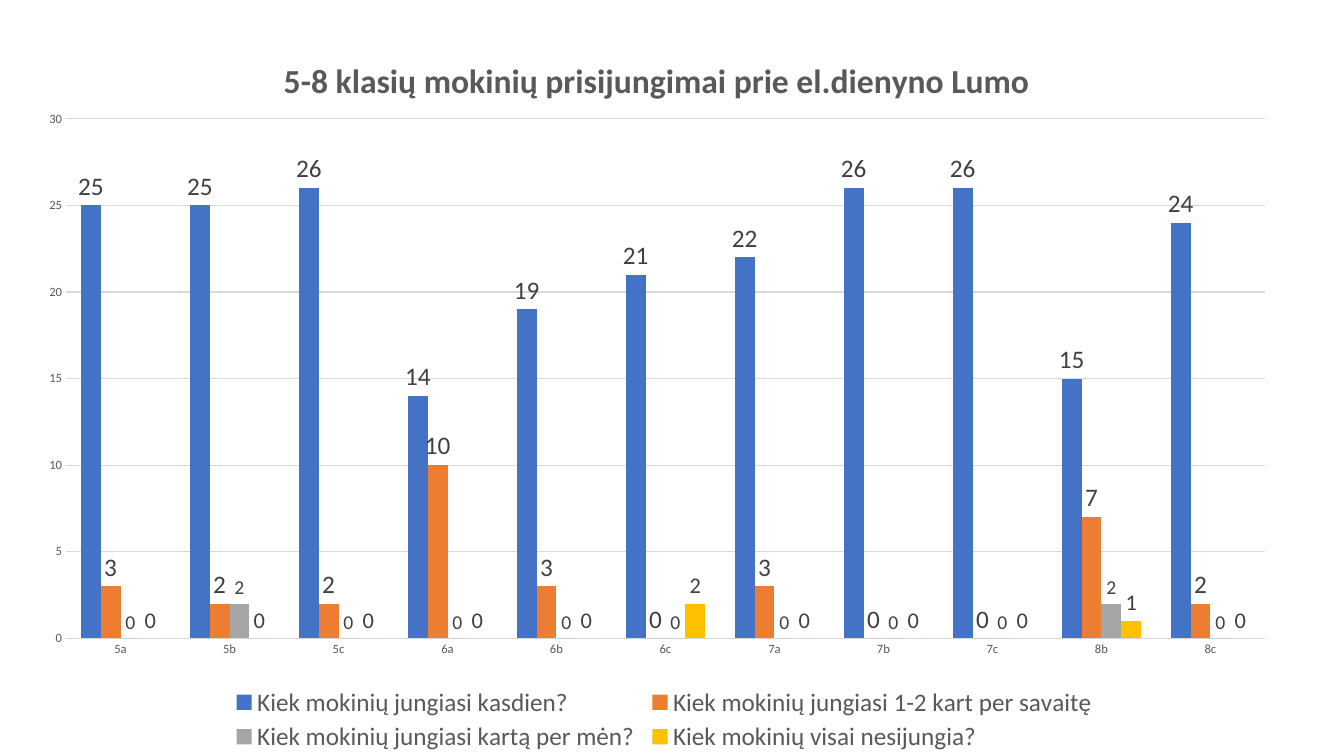
from lxml import etree
from pptx import Presentation
from pptx import util as u
from pptx.chart.data import CategoryChartData
from pptx.dml.color import RGBColor
from pptx.enum import chart as ch
from pptx.oxml.ns import qn

CLASSES = ["5a", "5b", "5c", "6a", "6b", "6c", "7a", "7b", "7c", "8b", "8c"]
# name, values, bar colour, label size
ANSWERS = [
    ("Kiek mokinių jungiasi kasdien?",
     [25, 25, 26, 14, 19, 21, 22, 26, 26, 15, 24], "4472C4", 18),
    ("Kiek mokinių jungiasi 1-2 kart per savaitę",
     [3, 2, 2, 10, 3, 0, 3, 0, 0, 7, 2], "ED7D31", 18),
    ("Kiek mokinių jungiasi kartą per mėn?",
     [0, 2, 0, 0, 0, 0, 0, 0, 0, 2, 0], "A5A5A5", 14),
    ("Kiek mokinių visai nesijungia?",
     [0, 0, 0, 0, 0, 2, 0, 0, 0, 1, 0], "FFC000", 16),
]


def rgb(value):
    return RGBColor.from_string(value)


def place(element, index, **fractions):
    """Fix a chart part's layout, in fractions of the chart area."""
    layout = element.find(qn("c:layout"))
    if layout is None:
        layout = etree.Element(qn("c:layout"))
        element.insert(index, layout)
    manual = etree.SubElement(layout, qn("c:manualLayout"))
    if element.tag == qn("c:plotArea"):
        etree.SubElement(manual, qn("c:layoutTarget")).set("val", "inner")
    for mode in ("xMode", "yMode"):
        etree.SubElement(manual, qn("c:" + mode)).set("val", "edge")
    for key, value in fractions.items():
        etree.SubElement(manual, qn("c:" + key)).set("val", str(value))


class Deck:
    font = "Calibri"
    grey = "595959"
    label_color = "404040"
    grid_color = "D9D9D9"

    def __init__(self, prs):
        self.slide = prs.slides.add_slide(prs.slide_layouts[6])

    def style(self, font, size, color=None, bold=False):
        font.name, font.size, font.bold = self.font, u.Pt(size), bold
        font.color.rgb = rgb(color or self.grey)

    def add_text(self, tf, content, **fmt):
        r = tf.paragraphs[0].add_run()
        r.text = content
        self.style(r.font, **fmt)

    def columns(self, title, categories, answers, left, top, width, height):
        data = CategoryChartData(number_format="General")
        data.categories = categories
        for name, values, _, _ in answers:
            data.add_series(name, values)
        box = [u.Inches(n) for n in (left, top, width, height)]
        chart = self.slide.shapes.add_chart(
            ch.XL_CHART_TYPE.COLUMN_CLUSTERED, *box, data).chart
        self.style(chart.font, 10, "000000")
        chart.has_title = True
        self.add_text(chart.chart_title.text_frame, title, size=24, bold=True)
        plot = chart.plots[0]
        plot.gap_width, plot.overlap = 150, 0
        plot.vary_by_categories = False
        for series, (_, _, color, size) in zip(plot.series, answers):
            self.bars(series, color, size)
        self.axes(chart)
        self.legend(chart)
        place(chart.chart_title._element, 1, x=0.2, y=0.035)
        plot_area = chart._chartSpace.chart.plotArea
        place(plot_area, 0, x=0.033, y=0.127, w=0.946, h=0.712)

    def bars(self, series, color, label_size):
        series.format.fill.solid()
        series.format.fill.fore_color.rgb = rgb(color)
        labels = series.data_labels
        labels.show_value = True
        labels.position = ch.XL_LABEL_POSITION.OUTSIDE_END
        self.style(labels.font, label_size, self.label_color)

    def axes(self, chart):
        for axis in (chart.category_axis, chart.value_axis):
            axis.major_tick_mark = axis.minor_tick_mark = ch.XL_TICK_MARK.NONE
            axis.format.line.fill.background()
            self.style(axis.tick_labels.font, 9)
        value = chart.value_axis
        value.minimum_scale, value.maximum_scale, value.major_unit = 0, 30, 5
        grid = value.major_gridlines.format.line
        grid.color.rgb, grid.width = rgb(self.grid_color), u.Pt(0.75)

    def legend(self, chart):
        chart.has_legend = True
        legend = chart.legend
        legend.position = ch.XL_LEGEND_POSITION.BOTTOM
        legend.include_in_layout = False
        self.style(legend.font, 18)
        place(legend._element, 1, x=0.16, y=0.9, w=0.69, h=0.1)


def main():
    prs = Presentation()
    prs.slide_width, prs.slide_height = u.Inches(13.33), u.Inches(7.5)
    deck = Deck(prs)
    deck.columns("5-8 klasių mokinių prisijungimai prie el.dienyno Lumo",
                 CLASSES, ANSWERS, 0.24, 0.26, 12.57, 7.24)
    prs.save("out.pptx")


if __name__ == "__main__":
    main()
